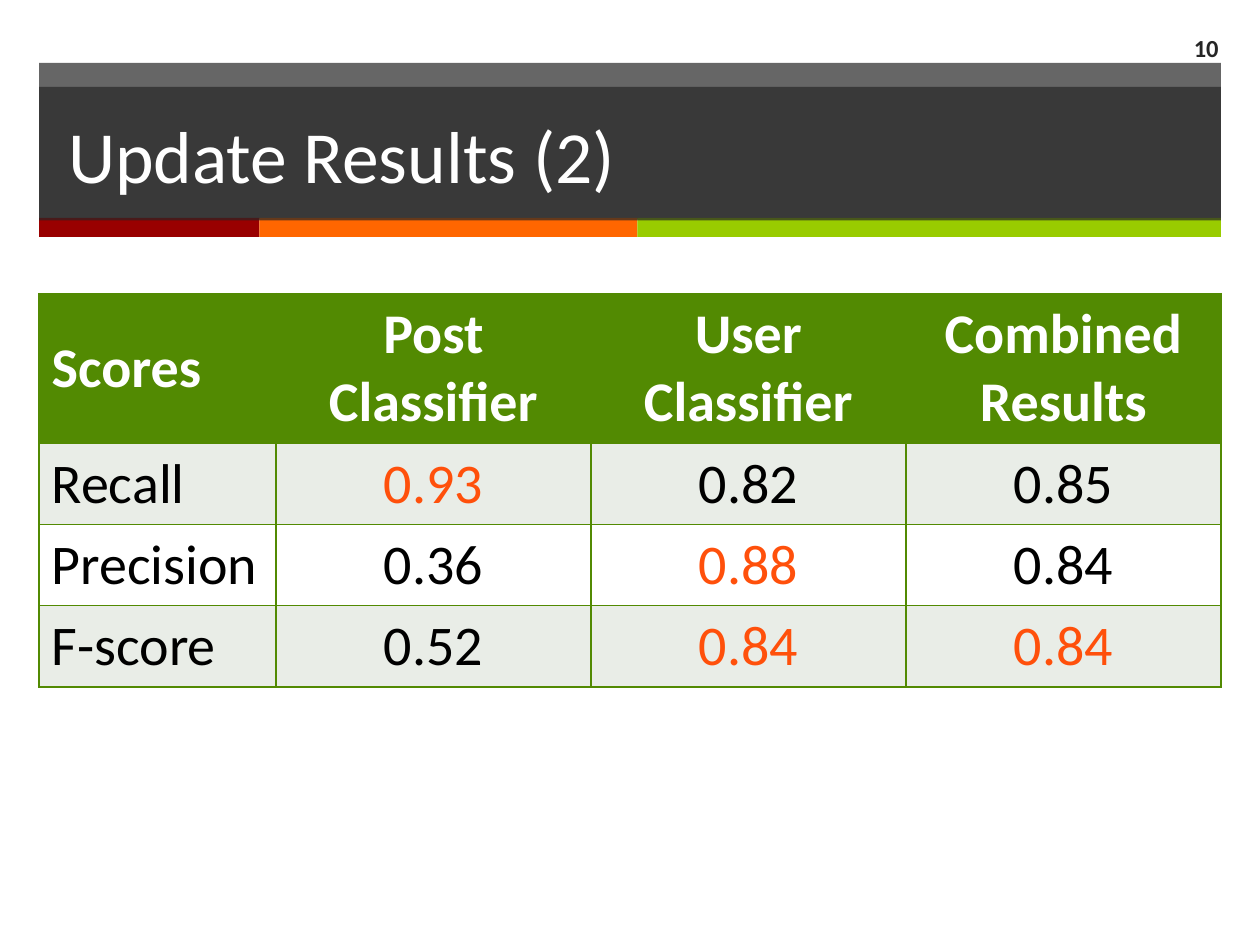
from dataclasses import dataclass

from lxml import etree
from pptx import Presentation
from pptx import util as u
from pptx.dml.color import RGBColor
from pptx.enum import shapes, text
from pptx.oxml import ns


@dataclass(frozen=True)
class Theme:
    font: str = "Calibri"
    dark: str = "262626"
    white: str = "FFFFFF"
    black: str = "000000"
    red: str = "990000"
    orange: str = "FF6600"
    lime: str = "99CC00"
    green: str = "528A02"
    stripe: str = "E9EDE7"
    best: str = "FF500B"
    title_size: int = 42
    table_size: int = 32
    number_size: int = 14
    band_opacity: int = 70
    border_width: int = 1


class SlideBuilder:
    """Draws styled elements on the current slide."""

    def __init__(self, page, theme):
        self.page = page
        self.theme = theme

    def label(self, frame, words, size, color, bold=False, align=text.PP_ALIGN.LEFT):
        frame.text = words
        para = frame.paragraphs[0]
        para.alignment = align
        span = para.runs[0]
        span.font.name = self.theme.font
        span.font.size = u.Pt(size)
        span.font.bold = bold
        span.font.color.rgb = RGBColor.from_string(color)

    def bar(self, left, top, width, height, color, opacity=100):
        box = self.page.shapes.add_shape(
            shapes.MSO_SHAPE.RECTANGLE, *map(u.Inches, (left, top, width, height)))
        box.shadow.inherit = False
        box.line.fill.background()
        box.fill.solid()
        box.fill.fore_color.rgb = RGBColor.from_string(color)
        if opacity < 100:
            tint = box.element.spPr.find(".//" + ns.qn("a:srgbClr"))
            etree.SubElement(tint, ns.qn("a:alpha"), val=str(opacity * 1000))
        return box

    def title(self, left, top, width, height, words):
        box = self.bar(left, top, width, height, self.theme.dark, self.theme.band_opacity)
        frame = box.text_frame
        frame.margin_left = u.Inches(0.23)
        frame.vertical_anchor = text.MSO_ANCHOR.MIDDLE
        self.label(frame, words, self.theme.title_size, self.theme.white)

    def page_number(self, left, top, width, height, words):
        box = self.page.shapes.add_textbox(*map(u.Inches, (left, top, width, height)))
        frame = box.text_frame
        frame.word_wrap = True
        frame.vertical_anchor = text.MSO_ANCHOR.MIDDLE
        self.label(frame, words, self.theme.number_size, self.theme.dark, True,
                   text.PP_ALIGN.RIGHT)

    def border(self, cell):
        props = cell._tc.get_or_add_tcPr()
        for place, side in enumerate(("a:lnL", "a:lnR", "a:lnT", "a:lnB")):
            line = etree.Element(ns.qn(side), w=str(int(u.Pt(self.theme.border_width))))
            fill = etree.SubElement(line, ns.qn("a:solidFill"))
            etree.SubElement(fill, ns.qn("a:srgbClr"), val=self.theme.green)
            props.insert(place, line)

    def table(self, left, top, widths, heights, rows, best):
        theme = self.theme
        frame = self.page.shapes.add_table(
            len(rows), len(widths),
            *map(u.Inches, (left, top, sum(widths), sum(heights))))
        grid = frame.table
        for column, width in zip(grid.columns, widths):
            column.width = u.Inches(width)
        for r, (row, height) in enumerate(zip(rows, heights)):
            grid.rows[r].height = u.Inches(height)
            header = r == 0
            fill = theme.green if header else theme.stripe if r % 2 else theme.white
            for c, words in enumerate(row):
                cell = grid.cell(r, c)
                cell.fill.solid()
                cell.fill.fore_color.rgb = RGBColor.from_string(fill)
                if header:
                    cell.vertical_anchor = text.MSO_ANCHOR.MIDDLE
                color = (theme.white if header
                         else theme.best if (r, c) in best else theme.black)
                align = text.PP_ALIGN.CENTER if c else text.PP_ALIGN.LEFT
                self.label(cell.text_frame, words, theme.table_size, color, header, align)
                self.border(cell)


def main():
    theme = Theme()
    deck = Presentation()
    deck.slide_width, deck.slide_height = u.Inches(10), u.Inches(7.5)
    slide = SlideBuilder(deck.slides.add_slide(deck.slide_layouts[6]), theme)

    left, width = 0.31, 9.38
    slide.bar(left, 0.5, width, 1.24, theme.dark, theme.band_opacity)
    strip_left = left
    for strip_width, color in ((1.75, theme.red), (3, theme.orange), (4.63, theme.lime)):
        slide.bar(strip_left, 1.73, strip_width, 0.15, color)
        strip_left += strip_width
    slide.title(left, 0.69, width, 1.06, "Update Results (2)")

    scores = (
        ("Scores", "Post Classifier", "User Classifier", "Combined Results"),
        ("Recall", "0.93", "0.82", "0.85"),
        ("Precision", "0.36", "0.88", "0.84"),
        ("F-score", "0.52", "0.84", "0.84"),
    )
    best_scores = {(1, 1), (2, 2), (3, 2), (3, 3)}
    slide.table(left, 2.33, [1.88] + [2.5] * 3, [1.19] + [0.64] * 3, scores, best_scores)
    slide.page_number(9.08, 0.18, 0.69, 0.39, "10")
    deck.save("out.pptx")


if __name__ == "__main__":
    main()
